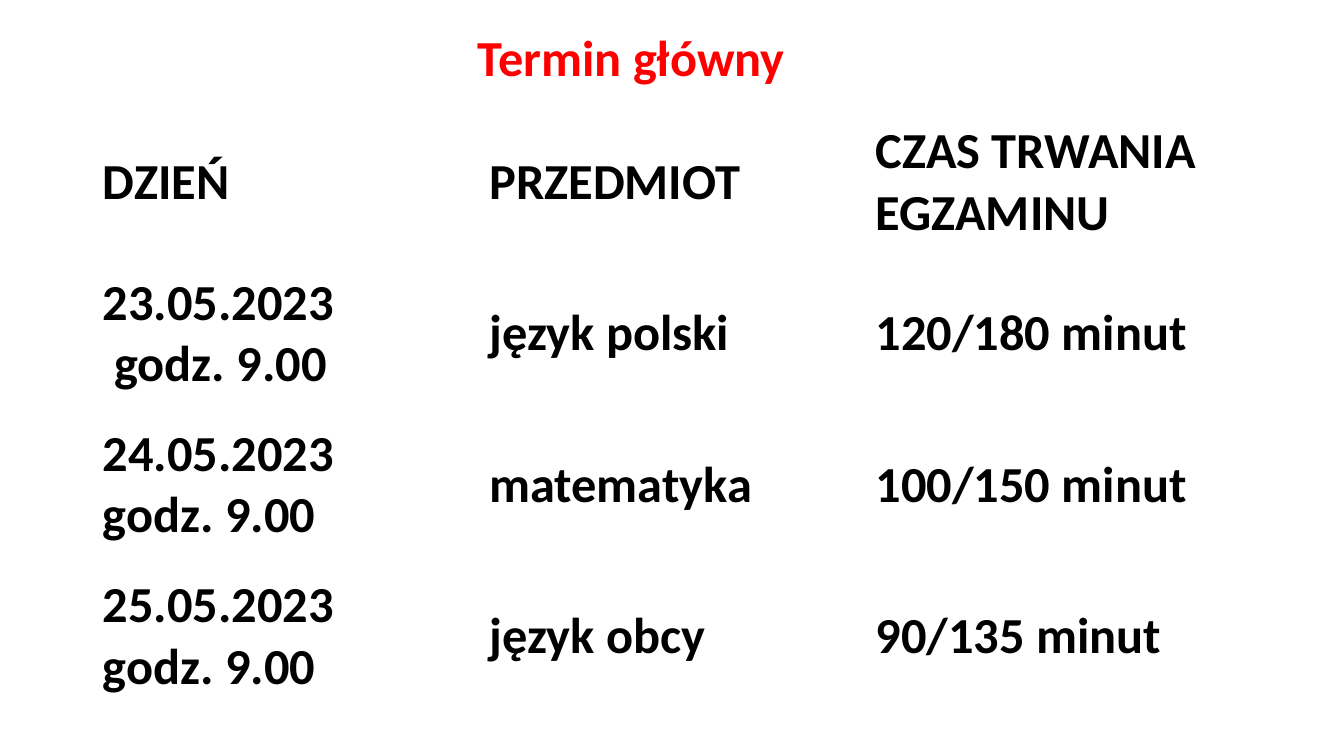
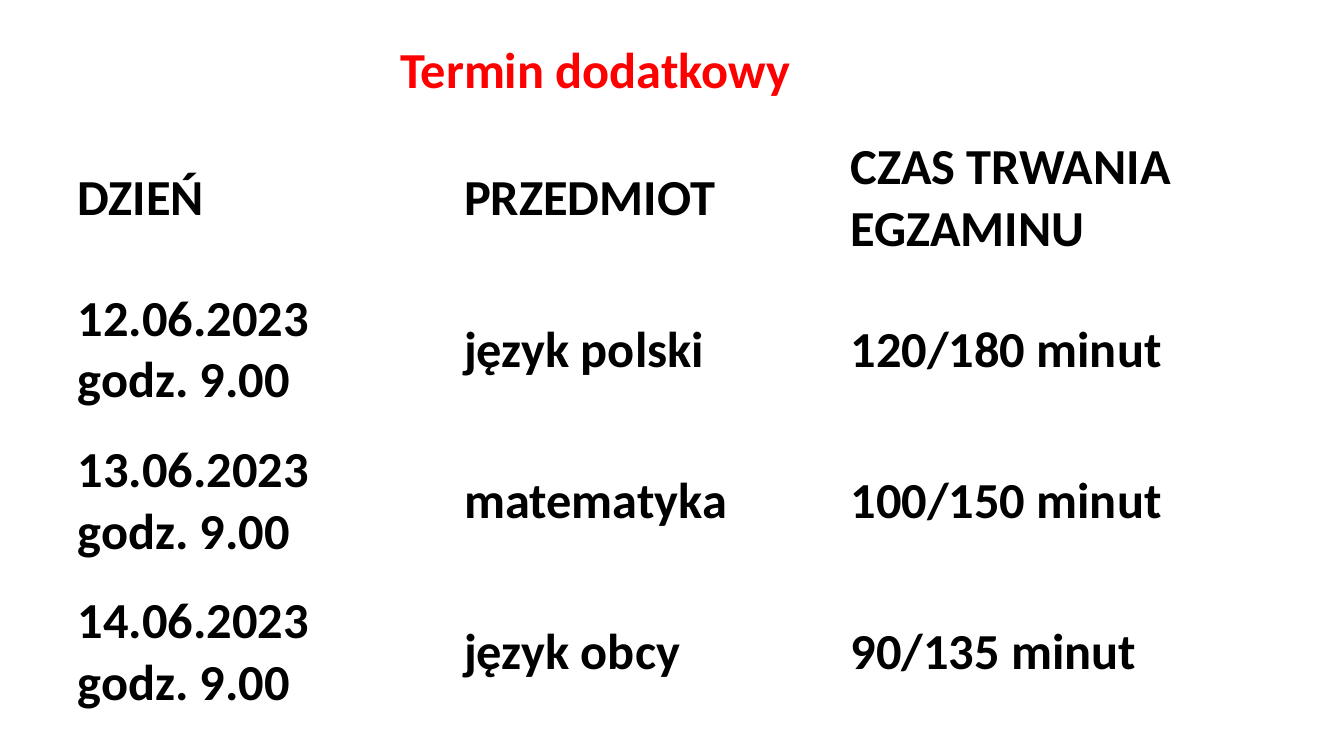
from pptx import Presentation
from pptx.dml.color import RGBColor
from pptx.enum.text import MSO_ANCHOR, MSO_AUTO_SIZE, PP_ALIGN
from pptx.util import Inches, Pt

RED = RGBColor(0xFF, 0x00, 0x00)
BLACK = RGBColor(0x00, 0x00, 0x00)
FONT_NAME = "Calibri"
FONT_SIZE = Pt(36)
TITLE_HEIGHT = 0.71
TABLE_WIDTH, TABLE_HEIGHT = 11.5, 6

HEADER = ("DZIEŃ", "PRZEDMIOT", "CZAS TRWANIA EGZAMINU")
EXAMS = (
    ("język polski", "120/180 minut"),
    ("matematyka", "100/150 minut"),
    ("język obcy", "90/135 minut"),
)
SESSIONS = (
    {
        "title": "Termin główny",
        "title_at": (4.62, 0.2, 3.28),
        "table_at": (0.92, 1.06),
        "days": ("23.05.2023\n godz. 9.00", "24.05.2023\ngodz. 9.00", "25.05.2023\ngodz. 9.00"),
    },
    {
        "title": "Termin dodatkowy",
        "title_at": (3.85, 0.32, 4.11),
        "table_at": (0.67, 1.22),
        "days": ("12.06.2023\ngodz. 9.00", "13.06.2023\ngodz. 9.00", "14.06.2023\ngodz. 9.00"),
    },
)


def write(frame, text, color, alignment):
    frame.text = text
    for para in frame.paragraphs:
        para.alignment = alignment
        para.font.name = FONT_NAME
        para.font.size = FONT_SIZE
        para.font.bold = True
        para.font.color.rgb = color


def add_title(page, text, position):
    left, top, width = position
    title = page.shapes.title
    title.left, title.top = Inches(left), Inches(top)
    title.width, title.height = Inches(width), Inches(TITLE_HEIGHT)
    frame = title.text_frame
    frame.word_wrap = False
    frame.auto_size = MSO_AUTO_SIZE.NONE
    frame.vertical_anchor = MSO_ANCHOR.MIDDLE
    write(frame, text, RED, PP_ALIGN.CENTER)


def add_schedule(page, days, position):
    rows = [HEADER] + [(day, *exam) for day, exam in zip(days, EXAMS)]
    left, top = position
    table = page.shapes.add_table(
        len(rows), len(HEADER), Inches(left), Inches(top), Inches(TABLE_WIDTH), Inches(TABLE_HEIGHT)
    ).table
    table.horz_banding = False
    for row, texts in zip(table.rows, rows):
        for cell, text in zip(row.cells, texts):
            cell.fill.background()
            cell.vertical_anchor = MSO_ANCHOR.MIDDLE
            write(cell.text_frame, text, BLACK, PP_ALIGN.LEFT)


def main():
    deck = Presentation()
    deck.slide_width, deck.slide_height = Inches(13.33), Inches(7.5)
    title_only = deck.slide_layouts.get_by_name("Title Only")
    for session in SESSIONS:
        page = deck.slides.add_slide(title_only)
        add_title(page, session["title"], session["title_at"])
        add_schedule(page, session["days"], session["table_at"])
    deck.save("out.pptx")


if __name__ == "__main__":
    main()
